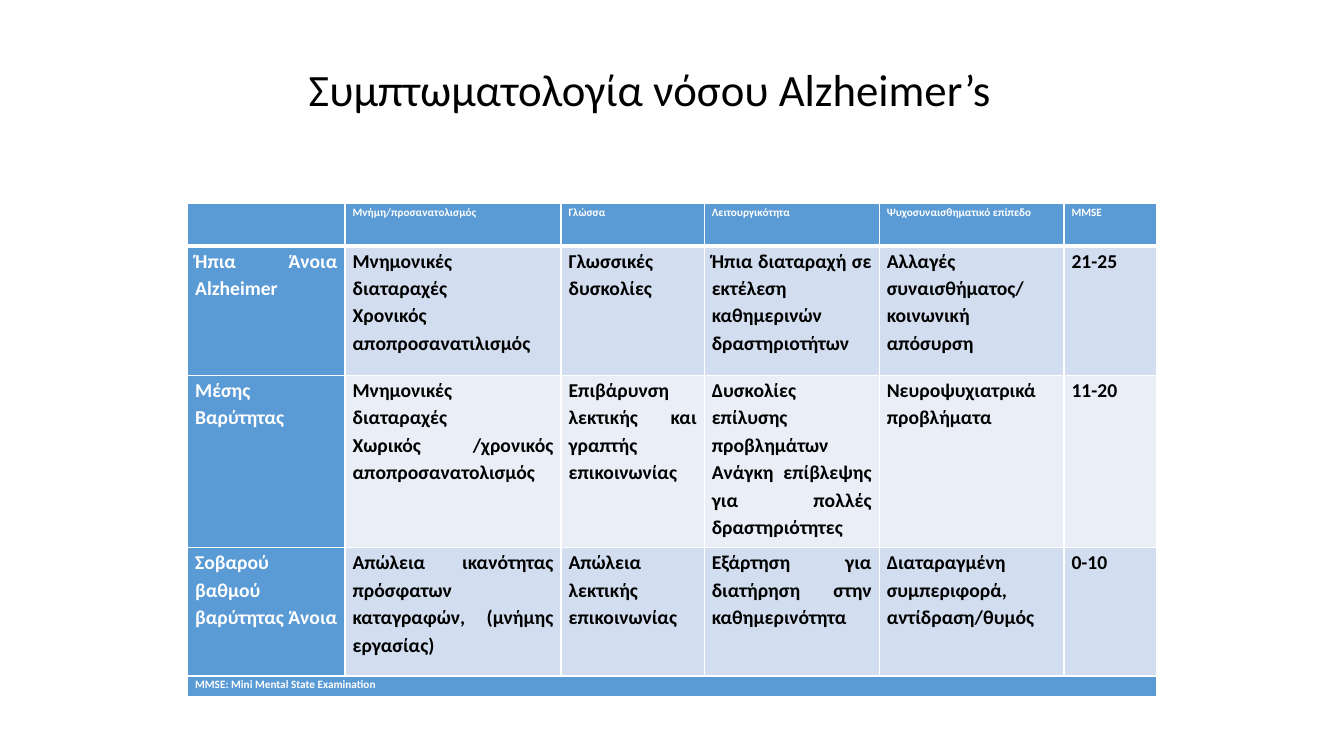
from lxml.etree import SubElement
from pptx import Presentation
from pptx.dml.color import RGBColor
from pptx.enum.text import MSO_ANCHOR as Anchor, MSO_AUTO_SIZE as AutoSize, PP_ALIGN as Align
from pptx.oxml.ns import qn
from pptx.util import Pt

WHITE = RGBColor(0xFF, 0xFF, 0xFF)
BLACK = RGBColor(0x00, 0x00, 0x00)
BLUE = RGBColor(0x5B, 0x9B, 0xD5)
BAND_DARK = RGBColor(0xD2, 0xDE, 0xEF)
BAND_LIGHT = RGBColor(0xEA, 0xEF, 0xF7)
FONT = "Calibri"
SMALL, LARGE = 8, 14

TITLE = "Συμπτωματολογία νόσου Alzheimer’s"
COLUMN_WIDTHS = [112.5, 154.3, 102.3, 125, 132, 66]
ROW_HEIGHTS = [30, 92.4, 123.2, 91.7, 14.4]
HEADERS = ["", "Μνήμη/προσανατολισμός", "Γλώσσα", "Λειτουργικότητα",
           "Ψυχοσυναισθηματικό επίπεδο", "MMSE"]
STAGES = [
    [["Ήπια Άνοια Alzheimer"],
     ["Μνημονικές\nδιαταραχές", "Χρονικός αποπροσανατιλισμός"],
     ["Γλωσσικές δυσκολίες"],
     ["Ήπια διαταραχή σε εκτέλεση καθημερινών δραστηριοτήτων"],
     ["Αλλαγές συναισθήματος/ κοινωνική απόσυρση"],
     ["21-25"]],
    [["Μέσης Βαρύτητας"],
     ["Μνημονικές\nδιαταραχές", "Χωρικός /χρονικός αποπροσανατολισμός"],
     ["Επιβάρυνση λεκτικής και γραπτής επικοινωνίας"],
     ["Δυσκολίες επίλυσης προβλημάτων", "Ανάγκη επίβλεψης για πολλές δραστηριότητες"],
     ["Νευροψυχιατρικά προβλήματα"],
     ["11-20"]],
    [["Σοβαρού βαθμού βαρύτητας Άνοια"],
     ["Απώλεια ικανότητας πρόσφατων καταγραφών, (μνήμης εργασίας)"],
     ["Απώλεια λεκτικής επικοινωνίας"],
     ["Εξάρτηση για διατήρηση στην καθημερινότητα"],
     ["Διαταραγμένη συμπεριφορά, αντίδραση/θυμός"],
     ["0-10"]],
]
FOOTNOTE = "MMSE: Mini Mental State Examination"


def add_run(paragraph, text, size, color, bold):
    run = paragraph.add_run()
    run.text = text
    run.font.name = FONT
    run.font.size = Pt(size)
    run.font.bold = bold
    run.font.color.rgb = color


def set_borders(cell, bottom_width):
    properties = cell._tc.get_or_add_tcPr()
    widths = {"a:lnL": 1, "a:lnR": 1, "a:lnT": 1, "a:lnB": bottom_width}
    for tag, width in widths.items():
        line = SubElement(properties, qn(tag), w=str(Pt(width)))
        fill = SubElement(line, qn("a:solidFill"))
        SubElement(fill, qn("a:srgbClr"), val=str(WHITE))


def fill_cell(cell, paragraphs, size, color, background, bottom_width=1):
    set_borders(cell, bottom_width)
    cell.fill.solid()
    cell.fill.fore_color.rgb = background
    cell.margin_left = cell.margin_right = Pt(5.4)
    cell.margin_top = cell.margin_bottom = Pt(0)
    frame = cell.text_frame
    for index, text in enumerate(paragraphs):
        paragraph = frame.add_paragraph() if index else frame.paragraphs[0]
        paragraph.alignment = Align.JUSTIFY
        paragraph.line_spacing = 1.15
        for number, line in enumerate(text.split("\n")):
            if number:
                paragraph.add_line_break()
            add_run(paragraph, line, size, color, True)


def set_title(slide):
    title = slide.shapes.title
    title.left, title.top = Pt(208), Pt(21)
    title.width, title.height = Pt(512.6), Pt(90)
    frame = title.text_frame
    frame.auto_size = AutoSize.NONE
    frame.word_wrap = True
    frame.vertical_anchor = Anchor.MIDDLE
    paragraph = frame.paragraphs[0]
    paragraph.alignment = Align.CENTER
    paragraph.line_spacing = 0.9
    add_run(paragraph, TITLE, 32, BLACK, False)


def add_stage_table(slide):
    frame = slide.shapes.add_table(len(ROW_HEIGHTS), len(COLUMN_WIDTHS), Pt(134), Pt(145.6),
                                   Pt(sum(COLUMN_WIDTHS)), Pt(sum(ROW_HEIGHTS)))
    table = frame.table
    for column, width in zip(table.columns, COLUMN_WIDTHS):
        column.width = Pt(width)
    for row, height in zip(table.rows, ROW_HEIGHTS):
        row.height = Pt(height)

    for column, header in enumerate(HEADERS):
        paragraphs = [header] if header else []
        fill_cell(table.cell(0, column), paragraphs, SMALL, WHITE, BLUE, bottom_width=3)

    for row, stage in enumerate(STAGES, start=1):
        band = BAND_DARK if row % 2 else BAND_LIGHT
        for column, paragraphs in enumerate(stage):
            color, background = (BLACK, band) if column else (WHITE, BLUE)
            fill_cell(table.cell(row, column), paragraphs, LARGE, color, background)

    last_row = len(ROW_HEIGHTS) - 1
    footnote = table.cell(last_row, 0)
    footnote.merge(table.cell(last_row, len(COLUMN_WIDTHS) - 1))
    fill_cell(footnote, [FOOTNOTE], SMALL, WHITE, BLUE)


def main():
    """Build the slide on the stages of Alzheimer's disease."""
    presentation = Presentation()
    presentation.slide_width, presentation.slide_height = Pt(960), Pt(540)
    slide = presentation.slides.add_slide(presentation.slide_layouts[5])
    set_title(slide)
    add_stage_table(slide)
    presentation.save("out.pptx")


if __name__ == "__main__":
    main()
